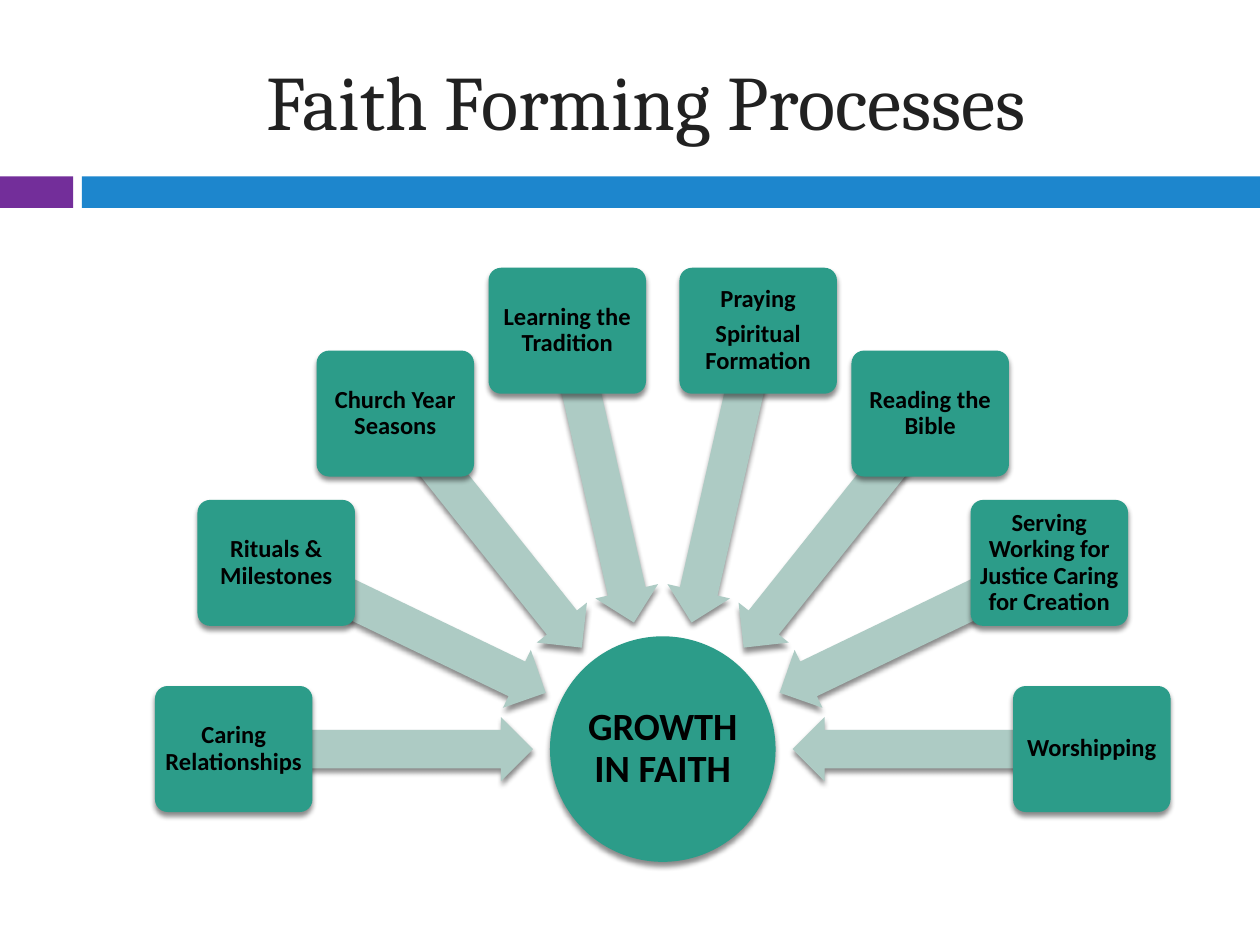
import math
from dataclasses import dataclass

from lxml import etree
from pptx import Presentation
from pptx import util as u
from pptx.dml.color import RGBColor
from pptx.enum import shapes, text
from pptx.oxml.ns import qn


@dataclass(frozen=True)
class Theme:
    purple: str = "732E9A"
    blue: str = "1D86CD"
    teal: str = "2C9C89"
    pale_teal: str = "ADCBC4"
    title_color: str = "212121"
    label_color: str = "000000"
    title_font: str = "Cambria"
    label_font: str = "Calibri"
    title_size: float = 44
    hub_size: float = 22
    label_size: float = 14


THEME = Theme()

# Content, clockwise from the left; each entry lists its paragraphs
TITLE = "Faith Forming Processes"
HUB = ["GROWTH IN FAITH"]
PROCESSES = [
    ["Caring Relationships"],
    ["Rituals & Milestones"],
    ["Church Year Seasons"],
    ["Learning the Tradition"],
    ["Praying", "Spiritual Formation"],
    ["Reading the Bible"],
    ["Serving Working for Justice Caring for Creation"],
    ["Worshipping"],
]

# Geometry in inches
WIDTH, HEIGHT = 10, 7.5
BAR_TOP, BAR_HEIGHT = 1.4, 0.25
BARS = [(0, 0.58, THEME.purple), (0.65, WIDTH, THEME.blue)]
HUB_CENTER = (5.26, 5.945)
HUB_SIZE = (1.79, 1.79)
BOX_SIZE, BOX_RADIUS = (1.25, 1), 3.405
ARROW_SIZE, ARROW_RADIUS = (2.38, 0.51), 2.22


def set_values(target, **values):
    for name, value in values.items():
        setattr(target, name, value)


def add_shadow(shape):
    effects = shape._element.spPr.find(qn("a:effectLst"))
    shadow = etree.SubElement(
        effects, qn("a:outerShdw"), blurRad=str(u.Pt(3)), dist=str(u.Pt(2.4)),
        dir="5400000", rotWithShape="0")
    color = etree.SubElement(shadow, qn("a:srgbClr"), val="000000")
    etree.SubElement(color, qn("a:alpha"), val="45000")


def add_solid(slide, kind, center, size, color, adjustments=(), shadow=True):
    left, top = (c - s / 2 for c, s in zip(center, size))
    shape = slide.shapes.add_shape(
        kind, *(u.Inches(v) for v in (left, top, *size)))
    shape.shadow.inherit = False
    shape.fill.solid()
    shape.fill.fore_color.rgb = RGBColor.from_string(color)
    shape.line.fill.background()
    for index, value in enumerate(adjustments):
        shape.adjustments[index] = value
    if shadow:
        add_shadow(shape)
    return shape


def write(shape, lines, font, size, color, bold=False, inset=None, spacing=None):
    frame = shape.text_frame
    set_values(frame, text="\n".join(lines), word_wrap=True,
               auto_size=text.MSO_AUTO_SIZE.NONE,
               vertical_anchor=text.MSO_ANCHOR.MIDDLE)
    if inset is not None:
        for side in ("left", "right", "top", "bottom"):
            setattr(frame, f"margin_{side}", u.Inches(inset))
    for paragraph in frame.paragraphs:
        paragraph.alignment = text.PP_ALIGN.CENTER
        if spacing:
            set_values(paragraph, line_spacing=spacing,
                       space_after=u.Pt(size * 0.35))
        for run in paragraph.runs:
            set_values(run.font, name=font, size=u.Pt(size), bold=bold)
            run.font.color.rgb = RGBColor.from_string(color)


def on_circle(radius, degrees):
    angle = math.radians(degrees)
    return (HUB_CENTER[0] - radius * math.cos(angle),
            HUB_CENTER[1] - radius * math.sin(angle))


def main():
    presentation = Presentation()
    set_values(presentation, slide_width=u.Inches(WIDTH),
               slide_height=u.Inches(HEIGHT))
    slide = presentation.slides.add_slide(presentation.slide_layouts[5])
    kinds = shapes.MSO_SHAPE
    label = dict(font=THEME.label_font, color=THEME.label_color,
                 bold=True, spacing=0.9)

    # Title and the two-colour bar below it
    title = slide.shapes.title
    set_values(title, left=u.Inches(0.67), top=u.Inches(0.25),
               width=u.Inches(8.92), height=u.Inches(1.08))
    write(title, [TITLE], THEME.title_font, THEME.title_size, THEME.title_color)
    for start, end, color in BARS:
        center = ((start + end) / 2, BAR_TOP + BAR_HEIGHT / 2)
        add_solid(slide, kinds.RECTANGLE, center, (end - start, BAR_HEIGHT),
                  color, shadow=False)

    # Hub
    hub = add_solid(slide, kinds.OVAL, HUB_CENTER, HUB_SIZE, THEME.teal)
    write(hub, HUB, size=THEME.hub_size, inset=0.02, **label)

    # Processes at equal angles over a half circle, each pointing at the hub
    step = 180 / (len(PROCESSES) - 1)
    for index, lines in enumerate(PROCESSES):
        degrees = index * step
        arrow = add_solid(slide, kinds.LEFT_ARROW,
                          on_circle(ARROW_RADIUS, degrees), ARROW_SIZE,
                          THEME.pale_teal, (0.6, 0.5))
        arrow.rotation = (180 + degrees) % 360
        box = add_solid(slide, kinds.ROUNDED_RECTANGLE,
                        on_circle(BOX_RADIUS, degrees), BOX_SIZE,
                        THEME.teal, (0.1,))
        write(box, lines, size=THEME.label_size, inset=0.03, **label)

    presentation.save("out.pptx")


if __name__ == "__main__":
    main()
